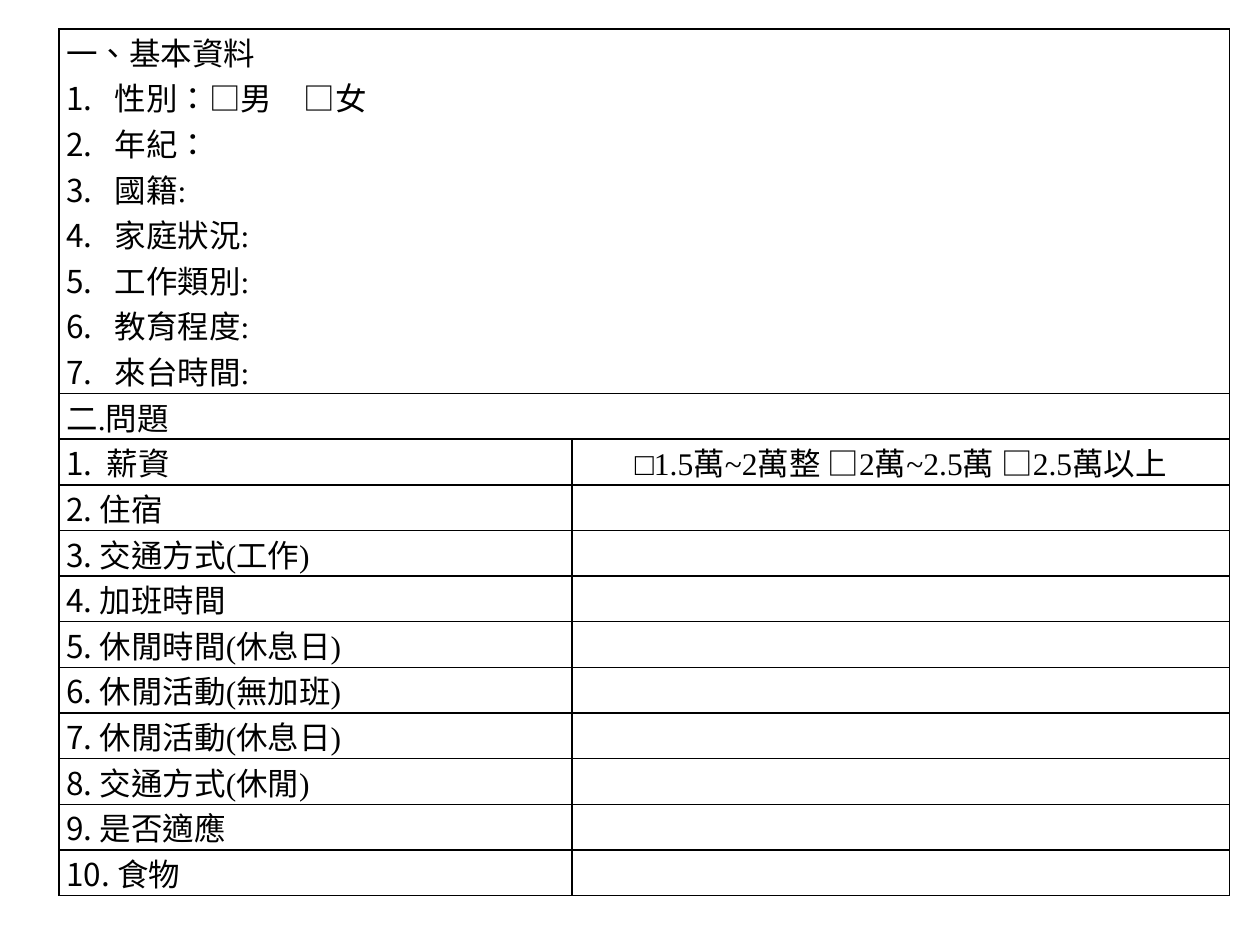
from lxml import etree
from pptx import Presentation
from pptx import util as u
from pptx.dml.color import RGBColor
from pptx.enum import lang, text
from pptx.oxml import ns

SERIF = "Times New Roman"
SANS = "Noto Sans CJK SC"


def paint(font, color):
    font.color.rgb = RGBColor.from_string(color)


def write(para, words, face=SERIF, size=18, color="000000", number=False):
    if number:
        props = para._p.get_or_add_pPr()
        props.set("marL", str(u.Cm(0.97)))
        props.set("indent", str(u.Cm(-0.97)))
        etree.SubElement(props, ns.qn("a:buFont"), typeface=SANS)
        etree.SubElement(props, ns.qn("a:buAutoNum"), type="arabicPeriod")
    run = para.add_run()
    run.text = words
    run.font.name = face
    run.font.size = u.Pt(size)
    run.font.language_id = lang.MSO_LANGUAGE_ID.TRADITIONAL_CHINESE
    paint(run.font, color)
    etree.SubElement(run._r.get_or_add_rPr(), ns.qn("a:ea"), typeface=SANS)


basics = ["性別：□男\u3000□女".replace("\u3000", "　"), "年紀：", "國籍:", "家庭狀況:",
          "工作類別:", "教育程度:", "來台時間:"]
topics = ["薪資", "住宿", "交通方式(工作)", "加班時間", "休閒時間(休息日)",
          "休閒活動(無加班)", "休閒活動(休息日)", "交通方式(休閒)", "是否適應", "食物"]

deck = Presentation()
deck.slide_width, deck.slide_height = u.Cm(25.4), u.Cm(19.05)
slide = deck.slides.add_slide(deck.slide_layouts[6])

count = len(topics) + 2
frame = slide.shapes.add_table(count, 2, u.Cm(1.19), u.Cm(0.58), u.Cm(23.6), u.Cm(16.59))
grid = frame.table
grid.columns[0].width = u.Cm(10.34)
grid.columns[1].width = u.Cm(13.26)
for row in grid.rows:
    row.height = u.Cm(0.91)
grid.rows[0].height = u.Cm(6.53)

for cell in grid.iter_cells():
    cell.margin_left = cell.margin_right = u.Cm(0.15)
    cell.margin_top = cell.margin_bottom = 0
    cell.vertical_anchor = text.MSO_ANCHOR.MIDDLE
    props = cell._tc.get_or_add_tcPr()
    for side in ("lnL", "lnR", "lnT", "lnB"):
        line = etree.SubElement(props, ns.qn("a:" + side), w=str(u.Pt(1)))
        fill = etree.SubElement(line, ns.qn("a:solidFill"))
        etree.SubElement(fill, ns.qn("a:srgbClr"), val="000000")
    cell.fill.background()

for row in range(2):
    grid.cell(row, 0).merge(grid.cell(row, 1))

head = grid.cell(0, 0)
head.vertical_anchor = text.MSO_ANCHOR.TOP
write(head.text_frame.paragraphs[0], "一、基本資料")
for item in basics:
    write(head.text_frame.add_paragraph(), item, number=True)

write(grid.cell(1, 0).text_frame.paragraphs[0], "二.問題")
for num, topic in enumerate(topics, 1):
    para = grid.cell(num + 1, 0).text_frame.paragraphs[0]
    write(para, f"{num}. " + (" " if num == 1 else ""), face=SANS)
    write(para, topic)

pay = grid.cell(2, 1).text_frame.paragraphs[0]
pay.alignment = text.PP_ALIGN.CENTER
write(pay, "□1.5萬~2萬整 □2萬~2.5萬 □2.5萬以上")

deck.save("out.pptx")
